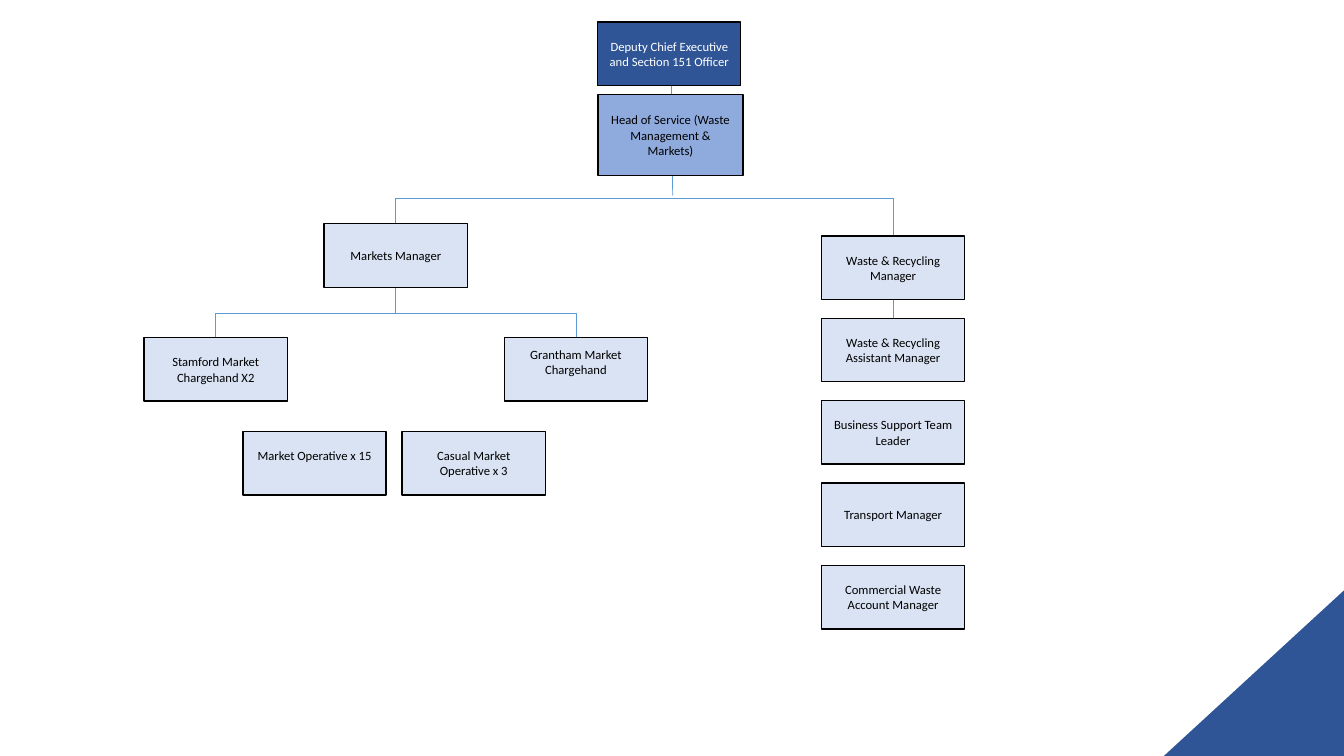
from lxml.etree import SubElement
from pptx import Presentation
from pptx.dml.color import RGBColor
from pptx.enum.shapes import MSO_CONNECTOR as Connector, MSO_SHAPE as Shape
from pptx.enum.text import MSO_ANCHOR as Anchor, PP_ALIGN as Align
from pptx.oxml.ns import qn
from pptx.util import Inches, Pt

COLORS = {"navy": "2F5597", "blue": "8FAADC", "pale": "DAE3F3",
          "line": "5B9BD5", "black": "000000", "white": "FFFFFF"}

presentation = Presentation()
presentation.slide_width, presentation.slide_height = Inches(13.33), Inches(7.5)
slide = presentation.slides.add_slide(presentation.slide_layouts[6])

# Grid of 100 columns by 100 rows
COLUMN = presentation.slide_width / 100
ROW = presentation.slide_height / 100
BOX_WIDTH, BOX_HEIGHT = 10.65, 8.4

# Centre columns of the branches
TOP, MARKETS, WASTE = 49.8, 29.45, 66.45
STAMFORD, GRANTHAM = MARKETS - 13.4, MARKETS + 13.4

# Top rows of the levels
DEPUTY_ROW, HEAD_ROW, MARKETS_ROW, WASTE_ROW = 2.93, 12.53, 29.6, 31.2
CHARGEHAND_ROW, OPERATIVE_ROW = 44.67, 57.07
WASTE_PITCH = 10.9


def add_line(kind, begin_x, begin_y, end_x, end_y):
    connector = slide.shapes.add_connector(
        kind, *(round(value) for value in (begin_x, begin_y, end_x, end_y)))
    connector.line.color.rgb = RGBColor.from_string(COLORS["line"])
    connector.line.width = Pt(0.5)
    SubElement(connector._element.spPr, qn("a:effectLst"))
    return connector


# Straight lines
for begin_column, begin_row, end_column, end_row in [
    (WASTE, WASTE_ROW, WASTE, WASTE_ROW + WASTE_PITCH),
    (49.95, 9.73, 50.05, 25.87),
    (MARKETS, MARKETS_ROW + BOX_HEIGHT, MARKETS, 41.4),
]:
    add_line(Connector.STRAIGHT, begin_column * COLUMN, begin_row * ROW,
             end_column * COLUMN, end_row * ROW)

# Brackets: elbows turned by 270 degrees, with the bar above both ends
for left, left_row, right, right_row, bar_row in [
    (STAMFORD, CHARGEHAND_ROW, GRANTHAM, CHARGEHAND_ROW + 0.1, 41.45),
    (MARKETS, MARKETS_ROW, WASTE, WASTE_ROW, 26.27),
]:
    center_x = (left + right) / 2 * COLUMN
    center_y = (left_row + right_row) / 2 * ROW
    half_drop = (right_row - left_row) / 2 * ROW
    half_span = (right - left) / 2 * COLUMN
    bracket = add_line(Connector.ELBOW, center_x + half_drop, center_y - half_span,
                       center_x - half_drop, center_y + half_span)
    properties = bracket._element.spPr
    properties.find(qn("a:xfrm")).set("rot", str(270 * 60000))
    bend = round((bar_row - left_row) / (right_row - left_row) * 100000)
    adjustments = properties.find(qn("a:prstGeom")).find(qn("a:avLst"))
    SubElement(adjustments, qn("a:gd"), name="adj1", fmla=f"val {bend}")

# Boxes: text, centre column, top row, width, height, fill, text colour, text lift
staff = [
    ("Markets Manager", MARKETS, MARKETS_ROW, 0),
    ("Stamford Market Chargehand X2", STAMFORD, CHARGEHAND_ROW, 0),
    ("Grantham Market Chargehand", GRANTHAM, CHARGEHAND_ROW, 2),
    ("Market Operative x 15", 23.4, OPERATIVE_ROW, 2),
    ("Casual Market Operative x 3", 35.25, OPERATIVE_ROW, 0),
]
waste_team = ["Waste & Recycling Manager", "Waste & Recycling Assistant Manager",
              "Business Support Team Leader", "Transport Manager",
              "Commercial Waste Account Manager"]
staff += [(text, WASTE, WASTE_ROW + index * WASTE_PITCH, 0)
          for index, text in enumerate(waste_team)]
boxes = [
    ("Deputy Chief Executive and Section 151 Officer", TOP, DEPUTY_ROW,
     BOX_WIDTH, BOX_HEIGHT, "navy", "white", 0),
    ("Head of Service (Waste Management & Markets)", TOP + 0.08, HEAD_ROW,
     10.8, 10.67, "blue", "black", 0),
]
boxes += [(text, center, top, BOX_WIDTH, BOX_HEIGHT, "pale", "black", lift)
          for text, center, top, lift in staff]

for text, center, top, width, height, fill, text_color, lift in boxes:
    box = slide.shapes.add_shape(
        Shape.RECTANGLE, round((center - width / 2) * COLUMN), round(top * ROW),
        round(width * COLUMN), round(height * ROW))
    box.shadow.inherit = False
    box.fill.solid()
    box.fill.fore_color.rgb = RGBColor.from_string(COLORS[fill])
    box.line.color.rgb = RGBColor.from_string(COLORS["black"])
    box.line.width = Pt(1)
    frame = box.text_frame
    frame.text = text
    frame.word_wrap = True
    frame.vertical_anchor = Anchor.MIDDLE
    frame.margin_bottom = round(Inches(0.05) + lift * ROW)
    paragraph = frame.paragraphs[0]
    paragraph.alignment = Align.CENTER
    font = paragraph.runs[0].font
    font.name, font.size = "Calibri", Pt(9)
    font.color.rgb = RGBColor.from_string(COLORS[text_color])

# Corner triangle
corner_width, corner_height = round(13.4 * COLUMN), round(21.9 * ROW)
corner = slide.shapes.add_shape(
    Shape.RIGHT_TRIANGLE, presentation.slide_width - corner_width,
    presentation.slide_height - corner_height, corner_width, corner_height)
corner._element.spPr.find(qn("a:xfrm")).set("flipH", "1")
corner.shadow.inherit = False
corner.fill.solid()
corner.fill.fore_color.rgb = RGBColor.from_string(COLORS["navy"])
corner.line.fill.background()

presentation.save("out.pptx")
